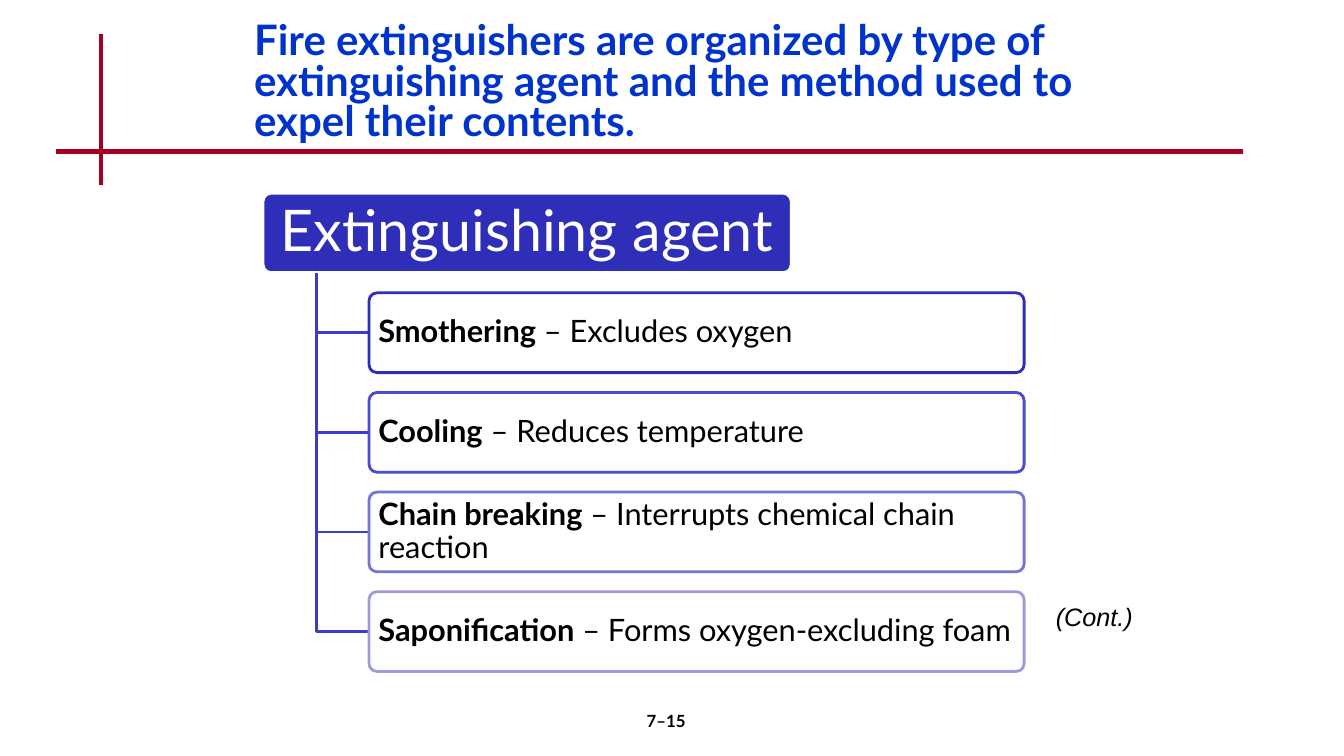
from pptx import Presentation
from pptx.dml.color import RGBColor
from pptx.enum.shapes import MSO_CONNECTOR as Link, MSO_SHAPE as Shape
from pptx.enum.text import MSO_ANCHOR as Anchor, MSO_AUTO_SIZE as Fit, PP_ALIGN as Align
from pptx.oxml.ns import qn
from pptx.util import Cm, Pt
from lxml.etree import SubElement

BLACK = RGBColor(0x00, 0x00, 0x00)
WHITE = RGBColor(0xFF, 0xFF, 0xFF)
BLUE = RGBColor(0x00, 0x33, 0xCC)
RED = RGBColor(0xA5, 0x00, 0x21)
NAVY = RGBColor(0x2E, 0x2E, 0xB9)
STEM = RGBColor(0x3B, 0x3B, 0xCD)
INDIGO = RGBColor(0x4B, 0x4B, 0xCD)
VIOLET = RGBColor(0x74, 0x74, 0xD4)
LILAC = RGBColor(0x9C, 0x9C, 0xDD)


def add_run(par, text, size, color, bold=False, face="Lato"):
    run = par.add_run()
    run.text = text
    font = run.font
    font.name, font.size, font.bold = face, Pt(size), bold
    font.color.rgb = color
    return run


def add_box(left, top, width, height, fill, edge, side, align):
    box = slide.shapes.add_shape(Shape.ROUNDED_RECTANGLE, Cm(left), Cm(top), Cm(width), Cm(height))
    box.adjustments[0] = 0.1
    box.shadow.inherit = False
    box.fill.solid()
    box.fill.fore_color.rgb = fill
    box.line.color.rgb = edge
    box.line.width = Pt(2)
    frame = box.text_frame
    frame.word_wrap = True
    frame.vertical_anchor = Anchor.MIDDLE
    frame.margin_left = frame.margin_right = Cm(side)
    frame.margin_top = frame.margin_bottom = Cm(0.13)
    par = frame.paragraphs[0]
    par.alignment = align
    par.line_spacing = 0.9
    return par


prs = Presentation()
prs.slide_width, prs.slide_height = Cm(33.87), Cm(19.05)
slide = prs.slides.add_slide(prs.slide_layouts[5])

for x1, y1, x2, y2 in [(2.54, 0.85, 2.54, 4.66), (1.42, 3.82, 31.33, 3.82)]:
    rule = slide.shapes.add_connector(Link.STRAIGHT, Cm(x1), Cm(y1), Cm(x2), Cm(y2))
    rule.line.color.rgb = RED
    rule.line.width = Pt(3)
    SubElement(rule._element.spPr, qn("a:effectLst"))

title = slide.shapes.title
title.left, title.top, title.width, title.height = Cm(6.15), Cm(0.43), Cm(21.59), Cm(3.38)
frame = title.text_frame
frame.auto_size = Fit.NONE
frame.word_wrap = True
frame.vertical_anchor = Anchor.MIDDLE
par = frame.paragraphs[0]
par.alignment = Align.LEFT
par.line_spacing = 0.8
add_run(par, "Fire extinguishers are organized by type of extinguishing agent "
        "and the method used to expel their contents.", 30, BLUE, True)

par = add_box(6.63, 4.87, 13.31, 2, NAVY, WHITE, 0.28, Align.CENTER)
add_run(par, "Extinguishing agent", 41, WHITE)

agents = [
    ("Smothering", " – Excludes oxygen", NAVY),
    ("Cooling", " – Reduces temperature", INDIGO),
    ("Chain breaking", " – Interrupts chemical chain reaction", VIOLET),
    ("Saponification", " – Forms oxygen-excluding foam", LILAC),
]
stem, base, left, high = 7.97, 6.88, 9.3, 2.01
for i, (name, effect, edge) in enumerate(agents):
    top = 7.38 + 2.51 * i
    mid = Cm(top + high / 2)
    path = slide.shapes.build_freeform(Cm(stem), Cm(base))
    path.add_line_segments([(Cm(stem), mid), (Cm(left), mid)], close=False)
    elbow = path.convert_to_shape()
    elbow.shadow.inherit = False
    elbow.fill.background()
    elbow.line.color.rgb = STEM
    elbow.line.width = Pt(2)
    par = add_box(left, top, 16.51, high, WHITE, edge, 0.18, Align.LEFT)
    add_run(par, name, 22, BLACK, True)
    add_run(par, effect, 22, BLACK)

notes = [
    ("7–15", 13.26, 17.78, 7.06, 1.27, 12, "Lato", Align.CENTER),
    ("(Cont.)", 24.56, 15.04, 4.24, 1.02, 18, "Arial", Align.RIGHT),
]
for text, x, y, wide, tall, size, face, align in notes:
    note = slide.shapes.add_textbox(Cm(x), Cm(y), Cm(wide), Cm(tall))
    note.text_frame.word_wrap = True
    par = note.text_frame.paragraphs[0]
    par.alignment = align
    run = add_run(par, text, size, BLACK, face == "Lato", face)
    run.font.italic = face == "Arial"

prs.save("out.pptx")
